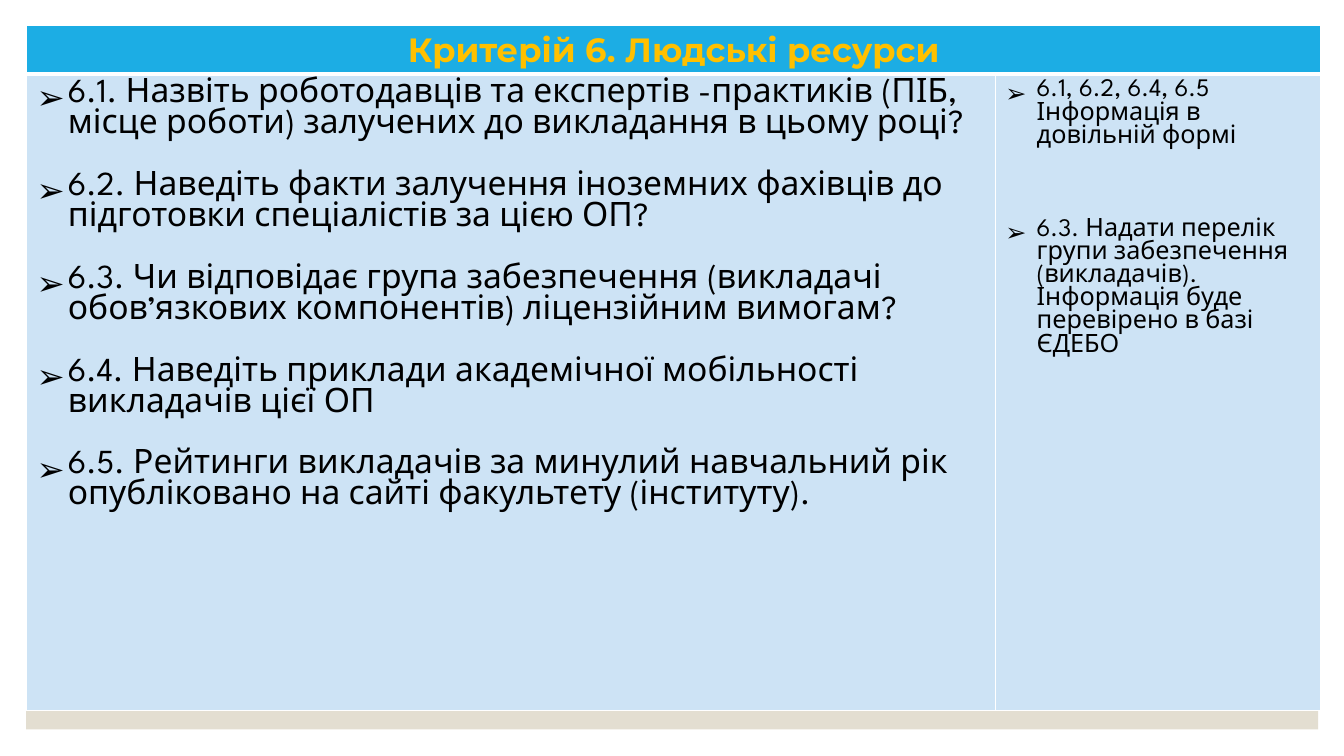
from lxml import etree
from pptx import Presentation
from pptx.dml.color import RGBColor
from pptx.enum.shapes import MSO_SHAPE
from pptx.enum.text import MSO_ANCHOR, PP_ALIGN
from pptx.oxml.ns import qn
from pptx.util import Pt

RECTANGLE = MSO_SHAPE.RECTANGLE
CENTER = PP_ALIGN.CENTER
MIDDLE, TOP = MSO_ANCHOR.MIDDLE, MSO_ANCHOR.TOP

COLORS = {"panel": "E3DED1", "header": "1CADE4", "title": "FFC000",
          "body": "CDE3F5", "text": "000000", "border": "FFFFFF"}
TITLE = "Критерій 6. Людські ресурси"
QUESTIONS = [
    "6.1. Назвіть роботодавців та експертів -практиків (ПІБ, місце роботи) залучених до викладання в цьому році?",
    "6.2. Наведіть факти залучення іноземних фахівців до підготовки спеціалістів за цією ОП?",
    "6.3. Чи відповідає група забезпечення (викладачі обов’язкових компонентів) ліцензійним вимогам?",
    "6.4. Наведіть приклади академічної мобільності викладачів цієї ОП",
    "6.5. Рейтинги викладачів за минулий навчальний рік опубліковано на сайті факультету (інституту).",
]
ANSWERS = [
    "6.1, 6.2, 6.4, 6.5 Інформація в довільній формі",
    "6.3. Надати перелік групи забезпечення (викладачів). Інформація буде перевірено в базі ЄДЕБО",
]
TITLE_FONT = {"name": "Montserrat", "size": Pt(24), "bold": True}
QUESTION_FONT = {"name": "League Spartan", "size": Pt(24), "bold": False}
ANSWER_FONT = {**QUESTION_FONT, "size": Pt(18)}
COLUMNS = (692, 232.5)
ROWS = (34.6, 454.4)
HANGING = 22.32


def rgb(key):
    return RGBColor.from_string(COLORS[key])


def style_font(font, values, color):
    for attribute, value in values.items():
        setattr(font, attribute, value)
    font.color.rgb = rgb(color)


def style_cell(cell, fill, anchor, margin, bottom_border=1):
    cell.fill.solid()
    cell.fill.fore_color.rgb = rgb(fill)
    cell.vertical_anchor = anchor
    cell.margin_top = cell.margin_bottom = Pt(margin)
    properties = cell._tc.get_or_add_tcPr()
    widths = {"a:lnL": 1, "a:lnR": 1, "a:lnT": 1, "a:lnB": bottom_border}
    for position, (side, width) in enumerate(widths.items()):
        line = etree.Element(qn(side), w=str(Pt(width)))
        solid = etree.SubElement(line, qn("a:solidFill"))
        etree.SubElement(solid, qn("a:srgbClr"), val=COLORS["border"])
        properties.insert(position, line)


def fill_bullets(cell, items, font, gap):
    """Writes arrow-bulleted items with a gap in points between them."""
    frame = cell.text_frame
    for index, item in enumerate(items):
        paragraph = frame.add_paragraph() if index else frame.paragraphs[0]
        run = paragraph.add_run()
        run.text = item
        style_font(run.font, font, "text")
        if index:
            paragraph.space_before = Pt(gap)
        properties = paragraph._p.get_or_add_pPr()
        properties.set("marL", str(Pt(HANGING)))
        properties.set("indent", str(-Pt(HANGING)))
        etree.SubElement(properties, qn("a:buFont"), typeface="Noto Sans Symbols")
        etree.SubElement(properties, qn("a:buChar"), char="➢")


def add_panel(slide, left, top, width, height):
    panel = slide.shapes.add_shape(RECTANGLE, Pt(left), Pt(top), Pt(width), Pt(height))
    panel.shadow.inherit = False
    panel.fill.solid()
    panel.fill.fore_color.rgb = rgb("panel")
    panel.line.fill.background()


def add_criterion_table(slide, left, top):
    table = slide.shapes.add_table(len(ROWS), len(COLUMNS), Pt(left), Pt(top),
                                   Pt(sum(COLUMNS)), Pt(sum(ROWS))).table
    table.horz_banding = False
    for column, width in zip(table.columns, COLUMNS):
        column.width = Pt(width)
    for row, height in zip(table.rows, ROWS):
        row.height = Pt(height)

    header = table.cell(0, 0)
    header.merge(table.cell(0, 1))
    for cell in table.rows[0].cells:
        style_cell(cell, "header", MIDDLE, 2, bottom_border=3)
    heading = header.text_frame.paragraphs[0]
    heading.alignment = CENTER
    run = heading.add_run()
    run.text = TITLE
    style_font(run.font, TITLE_FONT, "title")

    contents = ((QUESTIONS, QUESTION_FONT, 22.1), (ANSWERS, ANSWER_FONT, 49.7))
    for cell, (items, font, gap) in zip(table.rows[1].cells, contents):
        style_cell(cell, "body", TOP, 3.6)
        fill_bullets(cell, items, font, gap)


def main():
    presentation = Presentation()
    presentation.slide_width, presentation.slide_height = Pt(960), Pt(540)
    slide = presentation.slides.add_slide(presentation.slide_layouts[6])
    add_panel(slide, 18.6, 18.6, 923, 502.5)
    add_criterion_table(slide, 19, 18.4)
    presentation.save("out.pptx")


if __name__ == "__main__":
    main()
